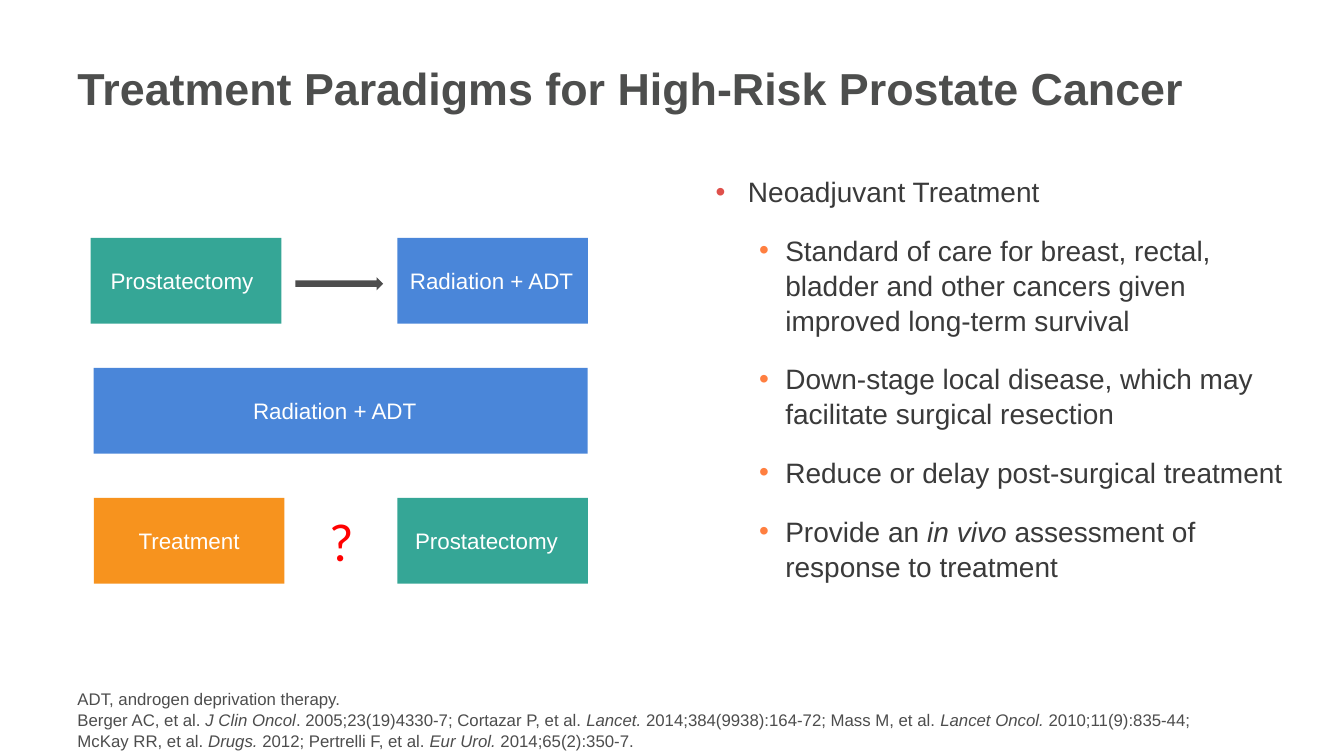
from lxml import etree
from pptx import Presentation, util as u
from pptx.dml.color import RGBColor
from pptx.enum import shapes, text
from pptx.oxml.ns import qn

PX = 9144  # 100 px to the inch
GREEN, BLUE, ORANGE = "35A696", "4A86D9", "F7931E"
GREY = "4D4D4D"

TITLE = "Treatment Paradigms for High-Risk Prostate Cancer"
# Asterisks enclose italics.
POINTS = [
    (0, "Neoadjuvant Treatment"),
    (1, "Standard of care for breast, rectal, bladder and other cancers "
        "given improved long-term survival"),
    (1, "Down-stage local disease, which may facilitate surgical resection"),
    (1, "Reduce or delay post-surgical treatment"),
    (1, "Provide an *in vivo *assessment of response to treatment"),
]
NOTES = [
    "ADT, androgen deprivation therapy.",
    "Berger AC, et al. *J Clin Oncol*. 2005;23(19)4330-7; "
    "Cortazar P, et al. *Lancet. *2014;384(9938):164-72; "
    "Mass M, et al. *Lancet Oncol.* 2010;11(9):835-44; "
    "McKay RR, et al. *Drugs.* 2012; "
    "Pertrelli F, et al. *Eur Urol.* 2014;65(2):350-7.",
]
# Bullet levels: left margin and hang in px, space before in pt, colour
LEVELS = [(32, 32, 0, "DF504B"), (69, 26, 5, "FF7F40")]


def px(*nums):
    return [u.Emu(n * PX) for n in nums]


def rgb(code):
    return RGBColor.from_string(code)


def style(para, size, color, bold=False, font="Arial"):
    for run in para.runs:
        run.font.name = font
        run.font.size = u.Pt(size)
        run.font.bold = bold
        run.font.color.rgb = rgb(color)


def write(para, words):
    """Add runs, with the parts between asterisks in italics."""
    for i, part in enumerate(words.split("*")):
        run = para.add_run()
        run.text = part
        run.font.italic = i % 2 == 1


def frame(slide, box):
    body = slide.shapes.add_textbox(*px(*box)).text_frame
    body.word_wrap = True
    return body


def fill(body, lines, size, color):
    """Write one paragraph for each line and return the paragraphs."""
    for i, line in enumerate(lines):
        para = body.add_paragraph() if i else body.paragraphs[0]
        write(para, line)
        para.line_spacing = 1.04
        style(para, size, color)
    return body.paragraphs


def bullet(para, level):
    left, hang, before, color = LEVELS[level]
    props = para._p.get_or_add_pPr()
    props.set("marL", str(left * PX))
    props.set("indent", str(-hang * PX))
    tint = etree.SubElement(props, qn("a:buClr"))
    etree.SubElement(tint, qn("a:srgbClr"), val=color)
    etree.SubElement(props, qn("a:buFont"), typeface="Arial")
    etree.SubElement(props, qn("a:buChar"), char="•")
    para.level = level
    para.space_before = u.Pt(before)
    para.space_after = u.Pt(12)


def shape(slide, kind, box, color):
    item = slide.shapes.add_shape(kind, *px(*box))
    item.shadow.inherit = False
    item.fill.solid()
    item.fill.fore_color.rgb = rgb(color)
    item.line.fill.background()
    return item


def step(slide, box, words, color, shift=0):
    """Draw a labelled box whose label sits shift px left of centre."""
    body = shape(slide, shapes.MSO_SHAPE.RECTANGLE, box, color).text_frame
    body.word_wrap = True
    body.vertical_anchor = text.MSO_ANCHOR.MIDDLE
    body.margin_left, body.margin_right = px(8, 8 + 2 * shift)
    para = body.paragraphs[0]
    para.text = words
    para.alignment = text.PP_ALIGN.CENTER
    style(para, 16, "FFFFFF")


def title(slide, box):
    body = frame(slide, box)
    body.vertical_anchor = text.MSO_ANCHOR.MIDDLE
    body.text = TITLE
    style(body.paragraphs[0], 32, "4D4E4D", bold=True)


def paths(slide, box):
    """Draw the three treatment paths as rows of boxes."""
    left, top, wide, _ = box
    high, pitch, part = 85, 129, 189
    rows = [top + i * pitch for i in range(3)]
    inner = left + 3
    last = left + wide - part

    step(slide, (left, rows[0], part, high), "Prostatectomy", GREEN, 4)
    shape(slide, shapes.MSO_SHAPE.RIGHT_ARROW,
          (left + 203, rows[0] + 39, 87, 13), GREY)
    step(slide, (last, rows[0], part, high), "Radiation + ADT", BLUE, 1)

    step(slide, (inner, rows[1], wide - 3, high), "Radiation + ADT", BLUE, 6)

    step(slide, (inner, rows[2], part, high), "Treatment", ORANGE)
    query = frame(slide, (left + 193, rows[2] + 8, 111, 71))
    query.text = "?"
    query.paragraphs[0].alignment = text.PP_ALIGN.CENTER
    style(query.paragraphs[0], 36, "FF0000", font="Lato")
    step(slide, (last, rows[2], part, high), "Prostatectomy", GREEN, 6)


def points(slide, box):
    lines = [words for _, words in POINTS]
    paras = fill(frame(slide, box), lines, 20, "3A3A3A")
    for para, (level, _) in zip(paras, POINTS):
        bullet(para, level)


def notes(slide, box):
    fill(frame(slide, box), NOTES, 12, GREY)


def main():
    deck = Presentation()
    deck.slide_width, deck.slide_height = px(1333, 750)
    slide = deck.slides.add_slide(deck.slide_layouts[6])
    title(slide, (67, 22, 1175, 130))
    points(slide, (700, 167, 602, 521))
    paths(slide, (90, 236, 493, 343))
    notes(slide, (67, 678, 1175, 48))
    deck.save("out.pptx")


if __name__ == "__main__":
    main()
